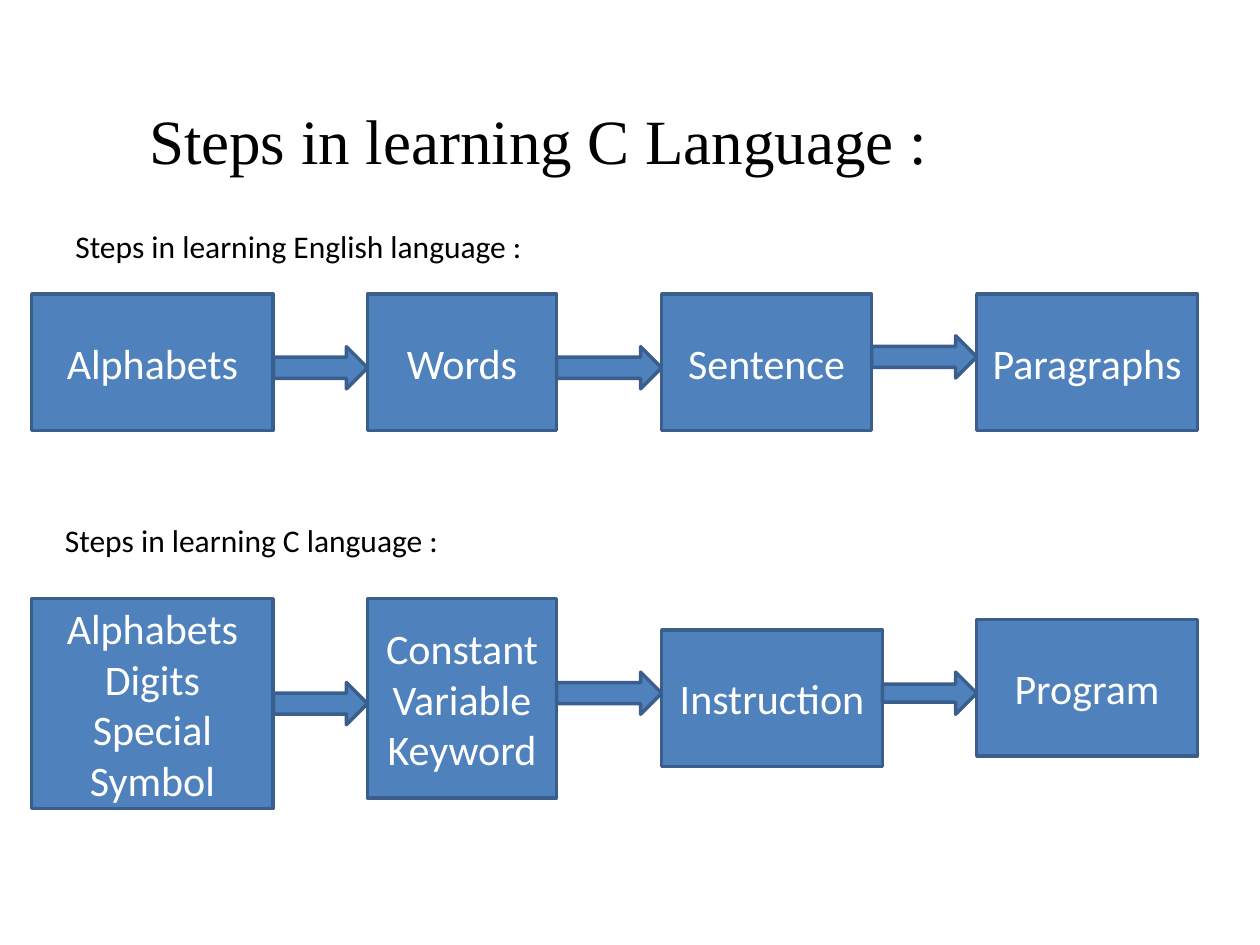
import pptx
import pptx.dml.color
import pptx.enum.shapes
import pptx.enum.text
import pptx.util
from dataclasses import dataclass
from pptx.util import Cm


@dataclass(frozen=True)
class Theme:
    fill: str = "4F81BD"
    outline: str = "3A5F8C"
    dark_text: str = "000000"
    light_text: str = "FFFFFF"
    title_font: str = "Times New Roman"
    body_font: str = "Calibri"
    title_size: int = 36
    label_size: int = 18
    box_size: int = 24
    outline_width: int = 2


theme = Theme()
PRESET = pptx.enum.shapes.MSO_SHAPE
ALIGN = pptx.enum.text.PP_ALIGN
ANCHOR = pptx.enum.text.MSO_ANCHOR


def write(shape, text, font, size, color, align, anchor):
    frame = shape.text_frame
    frame.word_wrap = True
    frame.vertical_anchor = anchor
    frame.text = text
    for paragraph in frame.paragraphs:
        paragraph.alignment = align
        for run in paragraph.runs:
            run.font.name = font
            run.font.size = pptx.util.Pt(size)
            run.font.color.rgb = pptx.dml.color.RGBColor.from_string(color)


def add_blue_shape(group, preset, left, top, width, height):
    """Add a filled, outlined shape; lengths are in centimetres."""
    shape = group.shapes.add_shape(preset, Cm(left), Cm(top), Cm(width), Cm(height))
    shape.shadow.inherit = False
    shape.fill.solid()
    shape.fill.fore_color.rgb = pptx.dml.color.RGBColor.from_string(theme.fill)
    shape.line.color.rgb = pptx.dml.color.RGBColor.from_string(theme.outline)
    shape.line.width = pptx.util.Pt(theme.outline_width)
    return shape


presentation = pptx.Presentation()
presentation.slide_width = Cm(25.4)
presentation.slide_height = Cm(19.05)
slide = presentation.slides.add_slide(presentation.slide_layouts[5])

title = slide.shapes.title
title.left, title.top, title.width, title.height = Cm(2.75), Cm(1.91), Cm(19.69), Cm(1.8)
write(title, "Steps in learning C Language :", theme.title_font, theme.title_size,
      theme.dark_text, ALIGN.LEFT, ANCHOR.TOP)
title.text_frame.auto_size = pptx.enum.text.MSO_AUTO_SIZE.NONE

# Both rows share the left edges of their four boxes.
box_lefts = [0.64, 7.41, 13.34, 19.69]
arrow_height = 0.85

# Label with its left and top, boxes as (text, top, width, height), arrow tops
rows = [
    ("Steps in learning English language :", 1.27, 4.45,
     [("Alphabets", 5.93, 4.87, 2.75),
      ("Words", 5.93, 3.81, 2.75),
      ("Sentence", 5.93, 4.23, 2.75),
      ("Paragraphs", 5.93, 4.45, 2.75)],
     [6.99, 6.99, 6.77]),
    ("Steps in learning C language :", 1.06, 10.37,
     [("Alphabets\nDigits\nSpecial Symbol", 12.07, 4.87, 4.23),
      ("Constant\nVariable\nKeyword", 12.07, 3.81, 4.02),
      ("Instruction", 12.7, 4.45, 2.75),
      ("Program", 12.49, 4.45, 2.75)],
     [13.76, 13.55, 13.55]),
]

for label_text, label_left, label_top, boxes, arrow_tops in rows:
    label = slide.shapes.add_textbox(Cm(label_left), Cm(label_top), Cm(10.37), Cm(1.02))
    write(label, label_text, theme.body_font, theme.label_size,
          theme.dark_text, ALIGN.LEFT, ANCHOR.TOP)

    group = slide.shapes.add_group_shape()
    for left, (text, top, width, height) in zip(box_lefts, boxes):
        box = add_blue_shape(group, PRESET.RECTANGLE, left, top, width, height)
        write(box, text, theme.body_font, theme.box_size,
              theme.light_text, ALIGN.CENTER, ANCHOR.MIDDLE)

    # Each arrow fills the gap between two neighbouring boxes.
    for index, arrow_top in enumerate(arrow_tops):
        start = box_lefts[index] + boxes[index][2]
        arrow = add_blue_shape(group, PRESET.RIGHT_ARROW, start, arrow_top,
                               box_lefts[index + 1] - start, arrow_height)

# The arrow into "Program" has a slimmer shaft.
arrow.adjustments[0] = 0.43

presentation.save("out.pptx")
